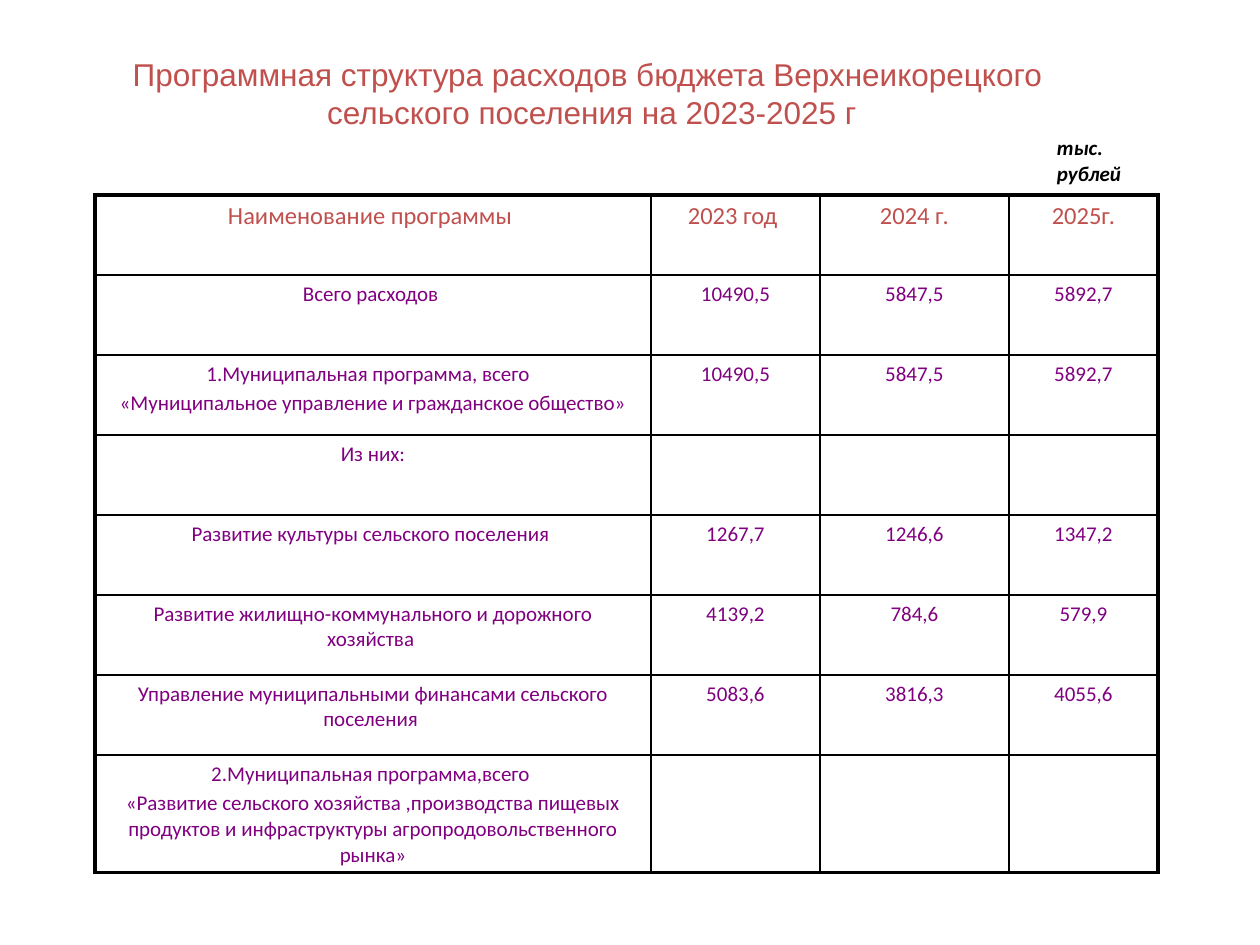
import pptx
import pptx.util
import pptx.dml.color
import pptx.enum.text
import pptx.oxml.ns
from lxml import etree

RGB = pptx.dml.color.RGBColor
RED = RGB(0xC0, 0x50, 0x4D)
PURPLE = RGB(0x80, 0x00, 0x80)
BLACK = RGB(0, 0, 0)
PT = pptx.util.Pt
ALIGN = pptx.enum.text.PP_ALIGN
TOP = pptx.enum.text.MSO_ANCHOR.TOP
FIT = pptx.enum.text.MSO_AUTO_SIZE

# Content
TITLE = ["Программная структура расходов бюджета Верхнеикорецкого ",
         "сельского поселения на 2023-2025 г"]
UNIT = ["тыс. рублей"]
HEAD = ["Наименование программы ", "2023 год ", "2024 г.", "2025г."]
ROWS = [
    ["Всего расходов ", "10490,5", "5847,5", "5892,7"],
    ["1.Муниципальная программа, всего  \n"
     "«Муниципальное управление и гражданское общество»",
     "10490,5", "5847,5", "5892,7"],
    ["Из них:", "", "", ""],
    ["Развитие культуры сельского поселения ", "1267,7", "1246,6", "1347,2"],
    ["Развитие жилищно-коммунального и дорожного хозяйства ",
     "4139,2", "784,6", "579,9"],
    ["Управление муниципальными финансами сельского поселения ",
     "5083,6", "3816,3", "4055,6"],
    ["2.Муниципальная программа,всего \n"
     "«Развитие сельского хозяйства ,производства пищевых продуктов "
     "и инфраструктуры агропродовольственного рынка»", "", "", ""],
]
WIDTHS = [556, 169, 189, 149]
HEIGHTS = [80] * 7 + [118]
THIN, THICK = 1, 2.25


def px(n):
    return pptx.util.Emu(round(n * 914400 / 126))


def write(frame, lines, size, color, face="Calibri", align=ALIGN.CENTER,
          bold=False, gap=0):
    for i, line in enumerate(lines):
        para = frame.paragraphs[0] if i == 0 else frame.add_paragraph()
        para.alignment = align
        para.line_spacing = 1.0
        para.space_before = PT(gap if i else 0)
        if not line:
            para.font.size = PT(size)
            continue
        run = para.add_run()
        run.text = line
        font = run.font
        font.name, font.size = face, PT(size)
        font.bold = font.italic = bold
        font.color.rgb = color


def edge(cell, side, width):
    line = etree.SubElement(cell._tc.get_or_add_tcPr(),
                            pptx.oxml.ns.qn("a:ln" + side), w=str(PT(width)))
    fill = etree.SubElement(line, pptx.oxml.ns.qn("a:solidFill"))
    etree.SubElement(fill, pptx.oxml.ns.qn("a:srgbClr"), val=str(BLACK))


deck = pptx.Presentation()
deck.slide_width, deck.slide_height = px(1260), px(945)
slide = deck.slides.add_slide(deck.slide_layouts[5])

# Title
title = slide.shapes.title
title.left, title.top, title.width, title.height = map(px, (74, 49, 1036, 88))
title.text_frame.vertical_anchor = TOP
title.text_frame.auto_size = FIT.NONE
write(title.text_frame, TITLE, 18, RED, "Arial")

# Unit note
note = slide.shapes.add_textbox(*map(px, (1057, 135, 114, 50))).text_frame
note.word_wrap = True
note.margin_left = note.margin_right = note.margin_top = note.margin_bottom = 0
write(note, UNIT, 12, BLACK, align=ALIGN.LEFT, bold=True)

# Budget table
data = [HEAD] + ROWS
box = map(px, (95, 195, sum(WIDTHS), sum(HEIGHTS)))
table = slide.shapes.add_table(len(data), len(HEAD), *box).table
table.first_row = table.horz_banding = False
for col, wide in zip(table.columns, WIDTHS):
    col.width = px(wide)
for row, high in zip(table.rows, HEIGHTS):
    row.height = px(high)

for r, texts in enumerate(data):
    for c, text in enumerate(texts):
        cell = table.cell(r, c)
        size, color = (14, RED) if r == 0 else (12, PURPLE)
        write(cell.text_frame, text.split("\n"), size, color, gap=2.4)
        # Thick line on the outer frame only
        outer = {"L": c == 0, "R": c == len(HEAD) - 1,
                 "T": r == 0, "B": r == len(data) - 1}
        for side, thick in outer.items():
            edge(cell, side, THICK if thick else THIN)
        cell.fill.background()

deck.save("out.pptx")
